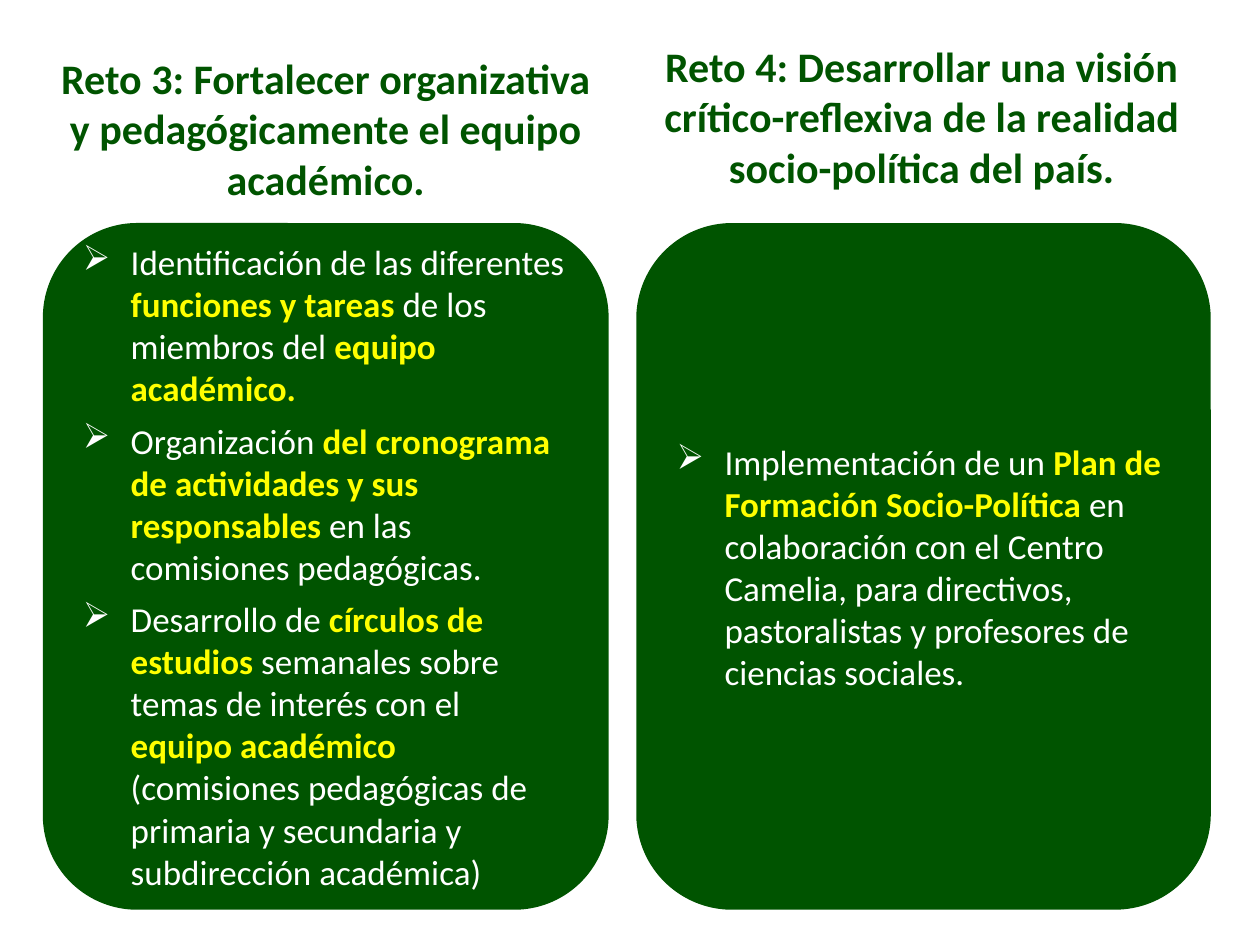
from dataclasses import dataclass

from lxml.etree import SubElement
from pptx import Presentation
from pptx.dml.color import RGBColor
from pptx.enum.shapes import MSO_SHAPE
from pptx.enum.text import MSO_ANCHOR, MSO_AUTO_SIZE, PP_ALIGN
from pptx.oxml.ns import qn
from pptx.util import Inches, Pt


@dataclass(frozen=True)
class Theme:
    green: RGBColor = RGBColor(0x00, 0x54, 0x00)
    white: RGBColor = RGBColor(0xFF, 0xFF, 0xFF)
    yellow: RGBColor = RGBColor(0xFF, 0xFF, 0x00)
    font: str = "Calibri"
    heading_size: Pt = Pt(24)
    body_size: Pt = Pt(20)
    paragraph_gap: Pt = Pt(3)


THEME = Theme()
PANEL_TOP, PANEL_HEIGHT = 1.77, 5.45
BULLET_INDENT = Inches(0.38)

# Each bullet alternates plain and highlighted text, starting with plain.
TEAM_BULLETS = [
    ["Identificación de las diferentes ", "funciones y tareas ",
     "de los miembros del ", "equipo académico."],
    ["Organización ", "del cronograma de actividades y sus responsables ",
     "en las comisiones pedagógicas."],
    ["Desarrollo de ", "círculos de estudios ",
     "semanales sobre temas de interés con el ", "equipo académico ",
     "(comisiones pedagógicas de primaria y secundaria y subdirección académica)"],
]
SOCIETY_BULLETS = [
    ["Implementación de un ", "Plan de Formación Socio-Política ",
     "en colaboración con el Centro Camelia, para directivos, "
     "pastoralistas y profesores de ciencias sociales."],
]


def format_run(run, size, color, bold):
    run.font.name = THEME.font
    run.font.size = size
    run.font.color.rgb = color
    run.font.bold = bold


def place_heading(shape, text, left, top, width, height):
    shape.left, shape.top = Inches(left), Inches(top)
    shape.width, shape.height = Inches(width), Inches(height)
    frame = shape.text_frame
    frame.text = text
    frame.word_wrap = True
    frame.auto_size = MSO_AUTO_SIZE.NONE
    frame.vertical_anchor = MSO_ANCHOR.MIDDLE
    paragraph = frame.paragraphs[0]
    paragraph.alignment = PP_ALIGN.CENTER
    format_run(paragraph.runs[0], THEME.heading_size, THEME.green, True)


def fill_bullet(paragraph, parts):
    paragraph.alignment = PP_ALIGN.LEFT
    paragraph.space_before = paragraph.space_after = THEME.paragraph_gap
    properties = paragraph._p.get_or_add_pPr()
    properties.set("marL", str(BULLET_INDENT))
    properties.set("indent", str(-BULLET_INDENT))
    SubElement(properties, qn("a:buChar"), char="➢")
    for index, text in enumerate(parts):
        highlighted = index % 2 == 1
        run = paragraph.add_run()
        run.text = text
        color = THEME.yellow if highlighted else THEME.white
        format_run(run, THEME.body_size, color, highlighted)


def add_panel(slide, bullets, left, top, width, height):
    panel = slide.shapes.add_shape(
        MSO_SHAPE.ROUNDED_RECTANGLE,
        Inches(left), Inches(top), Inches(width), Inches(height))
    panel.shadow.inherit = False
    panel.fill.solid()
    panel.fill.fore_color.rgb = THEME.green
    panel.line.fill.background()
    frame = panel.text_frame
    frame.word_wrap = True
    frame.vertical_anchor = MSO_ANCHOR.MIDDLE
    for index, parts in enumerate(bullets):
        paragraph = frame.add_paragraph() if index else frame.paragraphs[0]
        fill_bullet(paragraph, parts)


def build_challenges_slide(presentation):
    slide = presentation.slides.add_slide(presentation.slide_layouts[5])
    add_panel(slide, TEAM_BULLETS, 0.34, PANEL_TOP, 4.49, PANEL_HEIGHT)
    add_panel(slide, SOCIETY_BULLETS, 5.05, PANEL_TOP, 4.56, PANEL_HEIGHT)
    place_heading(
        slide.shapes.title,
        "Reto 3: Fortalecer organizativa y pedagógicamente el equipo académico.",
        0.34, 0.54, 4.49, 0.95)
    place_heading(
        slide.shapes.add_textbox(0, 0, 0, 0),
        "Reto 4: Desarrollar una visión crítico-reflexiva "
        "de la realidad socio-política del país.",
        5.02, 0.37, 4.59, 1.1)


def main():
    presentation = Presentation()
    presentation.slide_width = Inches(10)
    presentation.slide_height = Inches(7.5)
    build_challenges_slide(presentation)
    presentation.save("out.pptx")


if __name__ == "__main__":
    main()
